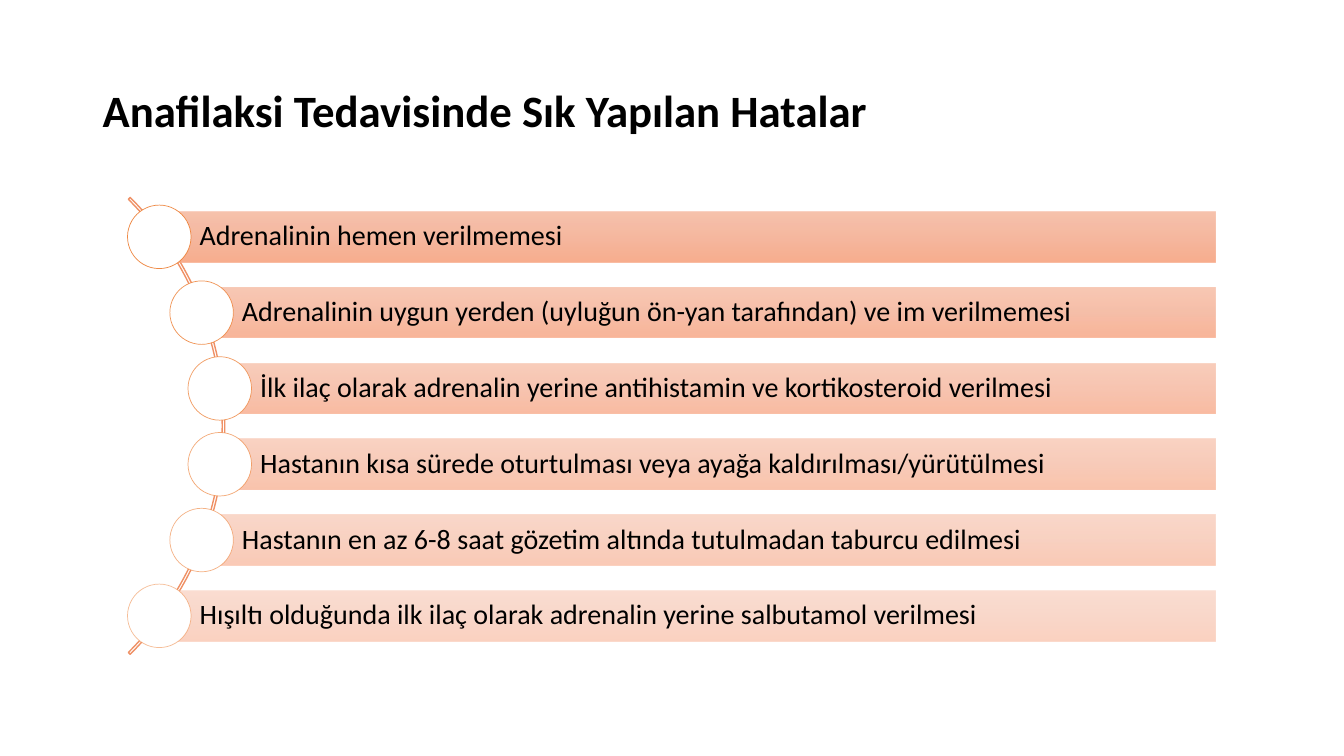
from pptx import Presentation
from pptx.dml.color import RGBColor
from pptx.enum import shapes, text
from pptx.oxml import ns
from pptx.util import Inches, Pt
from lxml import etree

HUES = {"ink": "000000", "disc": "FFFFFF", "ring": "ED7D31", "arc": "EF9166",
        "top": "F7BDA5", "mid": "F5B196", "low": "F8A582"}
STOPS = [(0, "top"), (50, "mid"), (100, "low")]
SHAPE = shapes.MSO_SHAPE

TITLE = "Anafilaksi Tedavisinde Sık Yapılan Hatalar"
ERRORS = [
    "Adrenalinin hemen verilmemesi",
    "Adrenalinin uygun yerden (uyluğun ön-yan tarafından) ve im verilmemesi",
    "İlk ilaç olarak adrenalin yerine antihistamin ve kortikosteroid verilmesi",
    "Hastanın kısa sürede oturtulması veya ayağa kaldırılması/yürütülmesi",
    "Hastanın en az 6-8 saat gözetim altında tutulmadan taburcu edilmesi",
    "Hışıltı olduğunda ilk ilaç olarak adrenalin yerine salbutamol verilmesi",
]
INDENTS = [0.31, 0.73, 0.91]  # bar offsets down to the middle, then mirrored


def rgb(name):
    return RGBColor.from_string(HUES[name])


def apply(obj, values):
    for key, value in values.items():
        setattr(obj, key, value)


def fade(color, alpha):
    """Add an opacity in percent to a colour element."""
    etree.SubElement(color, ns.qn("a:alpha"), val=str(alpha * 1000))


def write(shape, words, size, bold, pads):
    frame = shape.text_frame
    sides = ("margin_left", "margin_top", "margin_right", "margin_bottom")
    apply(frame, dict(zip(sides, map(Inches, pads))))
    apply(frame, {"word_wrap": True, "vertical_anchor": text.MSO_ANCHOR.MIDDLE})
    para = frame.paragraphs[0]
    apply(para, {"text": words, "line_spacing": 0.9,
                 "alignment": text.PP_ALIGN.LEFT})
    apply(para.font, {"name": "Calibri", "size": Pt(size), "bold": bold})
    para.font.color.rgb = rgb("ink")


def add(slide, kind, box):
    shape = slide.shapes.add_shape(kind, *map(Inches, box))
    shape.shadow.inherit = False
    return shape


def outline(shape, hue, width):
    shape.line.color.rgb = rgb(hue)
    shape.line.width = Pt(width)


def shade(shape, alpha):
    """Fill a bar with the downward, partly clear gradient."""
    shape.fill.gradient()
    shape.fill.gradient_angle = 270
    stops = shape._element.spPr.find(ns.qn("a:gradFill")).find(ns.qn("a:gsLst"))
    for stop in list(stops):
        stops.remove(stop)
    for spot, hue in STOPS:
        stop = etree.SubElement(stops, ns.qn("a:gs"), pos=str(spot * 1000))
        fade(etree.SubElement(stop, ns.qn("a:srgbClr"), val=HUES[hue]), alpha)


def draw_title(slide, box):
    shape = slide.shapes.add_textbox(*map(Inches, box))
    write(shape, TITLE, 32, True, (0.1, 0.05, 0.1, 0.05))


def draw_arc(slide, box):
    arc = add(slide, SHAPE.BLOCK_ARC, box)
    for i, value in enumerate((189, 27, 0.004)):
        arc.adjustments[i] = value
    arc.fill.background()
    outline(arc, "arc", 1)


def draw_row(slide, box, words, alpha):
    """Draw a bar with its words and the disc centred on its left edge."""
    left, top, _, high = box
    bar = add(slide, SHAPE.RECTANGLE, box)
    shade(bar, alpha)
    bar.line.fill.background()
    write(bar, words, 20, False, (0.4, 0.06, 0.06, 0.06))

    size = 0.63
    disc = add(slide, SHAPE.OVAL,
               (left - size / 2, top + (high - size) / 2, size, size))
    disc.fill.solid()
    disc.fill.fore_color.rgb = rgb("disc")
    outline(disc, "ring", 0.5)
    fade(disc._element.spPr.find(".//a:ln//a:srgbClr", ns._nsmap), alpha)


def draw_list(slide, box):
    left, top, wide, high = box
    bar = 0.5
    pitch = (high - bar) / (len(ERRORS) - 1)
    draw_arc(slide, (left - 5.45, top - 1.08, 6.41, 6.41))
    for i, (words, inset) in enumerate(zip(ERRORS, INDENTS + INDENTS[::-1])):
        row = (left + inset, top + i * pitch, wide - inset, bar)
        draw_row(slide, row, words, 90 - 8 * i)


def main():
    deck = Presentation()
    apply(deck, {"slide_width": Inches(13.33), "slide_height": Inches(7.5)})
    slide = deck.slides.add_slide(deck.slide_layouts[6])
    draw_title(slide, (0.92, 0.4, 11.5, 1.45))
    draw_list(slide, (1.27, 2.1, 10.79, 4.26))
    deck.save("out.pptx")


if __name__ == "__main__":
    main()
